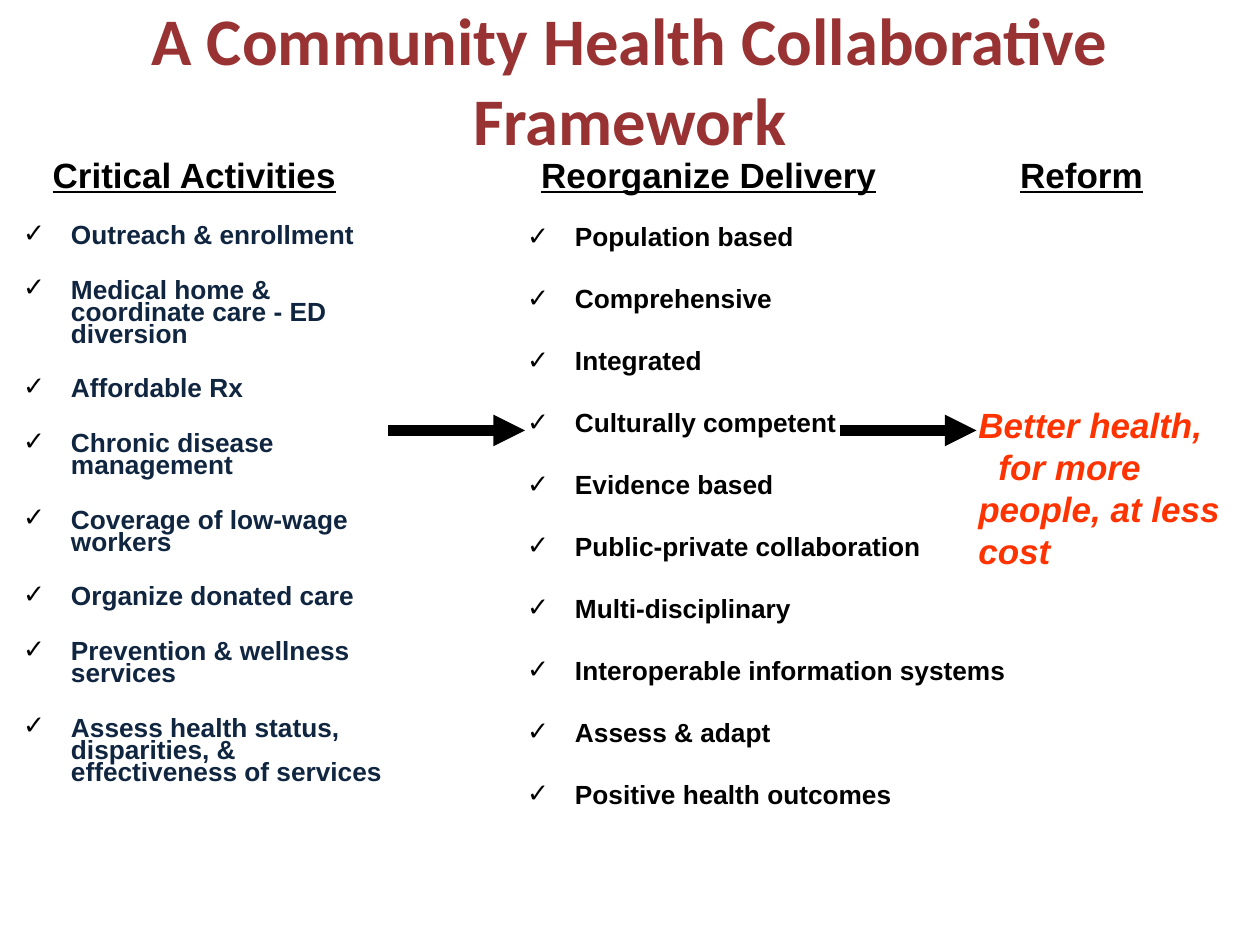
from pptx import Presentation
from pptx.dml.color import RGBColor
from pptx.enum.shapes import MSO_CONNECTOR
from pptx.enum.text import MSO_ANCHOR, MSO_AUTO_SIZE, PP_ALIGN
from pptx.oxml.ns import qn
from pptx.util import Inches, Pt
from lxml import etree

STRAIGHT = MSO_CONNECTOR.STRAIGHT
MIDDLE, TOP = MSO_ANCHOR.MIDDLE, MSO_ANCHOR.TOP
FIXED = MSO_AUTO_SIZE.NONE
CENTER, LEFT = PP_ALIGN.CENTER, PP_ALIGN.LEFT
COLUMNS, ROWS = 120, 90
CELL = Inches(10) / COLUMNS
COLORS = {"title": "993333", "activity": "10253F", "ink": "000000", "goal": "FF3300"}

TITLE = "A Community Health Collaborative Framework"
ACTIVITIES = [
    "Outreach & enrollment",
    "Medical home & coordinate care - ED diversion",
    "Affordable Rx",
    "Chronic disease management",
    "Coverage of low-wage workers",
    "Organize donated care",
    "Prevention & wellness services",
    "Assess health status, disparities, & effectiveness of services",
]
DELIVERY = [
    "Population based",
    "Comprehensive",
    "Integrated",
    "Culturally competent",
    "Evidence based",
    "Public-private collaboration",
    "Multi-disciplinary",
    "Interoperable information systems",
    "Assess & adapt",
    "Positive health outcomes",
]
HEADINGS = [
    ("Critical Activities", (2, 14, 33, 5.2)),
    ("Reorganize Delivery", (49, 14, 37, 5.2)),
    ("Reform", (89, 14, 28, 5.2)),
]
ARROWS = [(37, 50, 41), (80, 93, 41)]


def grid(*cells):
    """Turn grid cells into slide lengths."""
    return [round(cell * CELL) for cell in cells]


def assign(target, values):
    """Set each named value on the target."""
    for name, value in values.items():
        setattr(target, name, value)


def place(shape, box):
    """Move a placeholder to its box on the grid."""
    assign(shape, dict(zip(("left", "top", "width", "height"), grid(*box))))


def add_span(para, text, color, **style):
    """Add one formatted span to a paragraph."""
    span = para.add_run()
    span.text = text
    assign(span.font, {"name": "Arial", "bold": True, **style})
    span.font.color.rgb = RGBColor.from_string(COLORS[color])


def add_title(shape, box):
    """Fill the title placeholder."""
    place(shape, box)
    frame = shape.text_frame
    assign(frame, {"word_wrap": True, "auto_size": FIXED, "vertical_anchor": MIDDLE})
    frame.paragraphs[0].alignment = CENTER
    add_span(frame.paragraphs[0], TITLE, "title", name="Calibri", size=Pt(38))


def add_check(para):
    """Give a paragraph a hanging check mark."""
    props = para._p.get_or_add_pPr()
    props.set("marL", str(Inches(0.38)))
    props.set("indent", str(-Inches(0.38)))
    tint = etree.SubElement(props, qn("a:buClr"))
    etree.SubElement(tint, qn("a:srgbClr"), val=COLORS["ink"])
    etree.SubElement(props, qn("a:buFont"), typeface="Arial")
    etree.SubElement(props, qn("a:buChar"), char="✓")


def add_checklist(shape, box, items, color, spacing, gap):
    """Fill a body placeholder with checked items."""
    place(shape, box)
    frame = shape.text_frame
    assign(frame, {"word_wrap": True, "auto_size": FIXED, "vertical_anchor": TOP,
                   "margin_right": Inches(0.2)})
    for index, item in enumerate(items):
        para = frame.paragraphs[0] if index == 0 else frame.add_paragraph()
        assign(para, {"alignment": LEFT, "line_spacing": spacing,
                      "space_before": Pt(gap if index else 0), "space_after": Pt(0)})
        add_check(para)
        add_span(para, item, color, size=Pt(15))


def add_label(page, box, lines, color, alignment, **style):
    """Add a text box with one paragraph for each line."""
    frame = page.shapes.add_textbox(*grid(*box)).text_frame
    assign(frame, {"word_wrap": True, "margin_right": Inches(0.2 if alignment == LEFT else 0.1)})
    for index, line in enumerate(lines):
        para = frame.paragraphs[0] if index == 0 else frame.add_paragraph()
        para.alignment = alignment
        if index:
            para._p.get_or_add_pPr().set("indent", str(Inches(0.16)))
        add_span(para, line, color, size=Pt(20), **style)


def add_arrow(page, start, end, row):
    """Draw a heavy arrow along one grid row."""
    arrow = page.shapes.add_connector(STRAIGHT, *grid(start, row, end, row))
    arrow.line.width = Pt(6)
    arrow.line.color.rgb = RGBColor.from_string(COLORS["ink"])
    etree.SubElement(arrow.line._get_or_add_ln(), qn("a:tailEnd"), type="triangle")
    etree.SubElement(arrow._element.spPr, qn("a:effectLst"))


def build():
    """Build and save the framework slide."""
    deck = Presentation()
    deck.slide_width, deck.slide_height = grid(COLUMNS, ROWS)
    page = deck.slides.add_slide(deck.slide_layouts[3])
    title, activities, delivery = page.placeholders
    add_title(title, (0, 0, COLUMNS, 15))
    add_checklist(activities, (1, 21, 39, 59.4), ACTIVITIES, "activity", 0.7, 18.6)
    add_checklist(delivery, (49, 21, 52, 69), DELIVERY, "ink", 0.8, 21)
    for arrow in ARROWS:
        add_arrow(page, *arrow)
    add_label(page, (92, 37.8, 30, 13.2), ["Better health,", "for more people, at less cost"],
              "goal", LEFT, italic=True)
    for text, box in HEADINGS:
        add_label(page, box, [text], "ink", CENTER, underline=True)
    deck.save("out.pptx")


if __name__ == "__main__":
    build()
